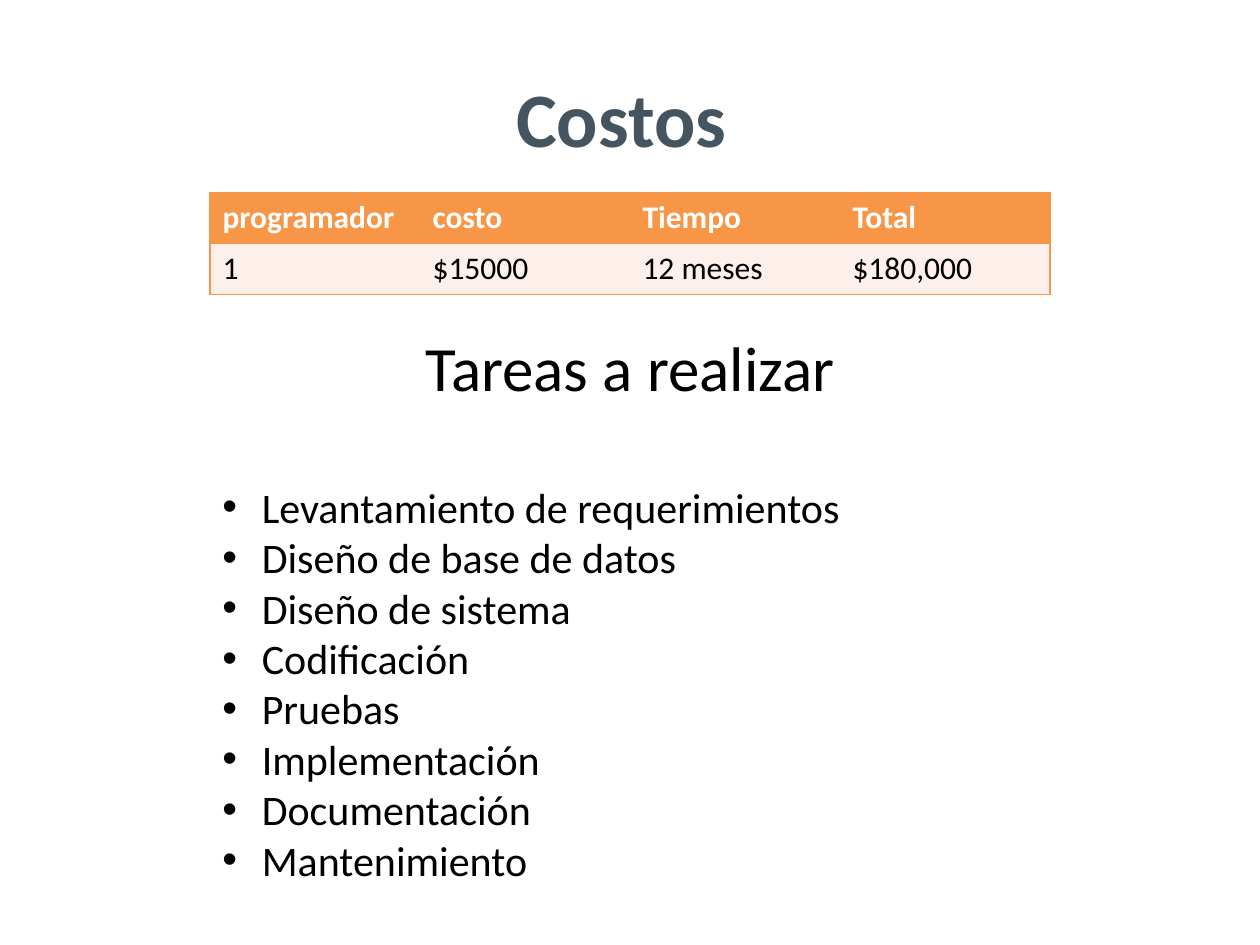
from dataclasses import dataclass

from lxml.etree import SubElement as Sub
from pptx import Presentation
from pptx.dml.color import RGBColor as RGB
from pptx.enum.text import MSO_ANCHOR as Anchor, PP_ALIGN as Align
from pptx.oxml.ns import qn
from pptx.util import Pt


@dataclass(frozen=True)
class Theme:
    face: str = "Calibri"
    slate: str = "455560"
    orange: str = "F79646"
    tint: str = "FDEFE9"
    white: str = "FFFFFF"
    black: str = "000000"
    title: int = 44
    head: int = 36
    body: int = 24
    cell: int = 18


THEME = Theme()
COSTS = [
    ["programador", "costo", "Tiempo", "Total"],
    ["1", "$15000", "12 meses", "$180,000"],
]
TASKS = [
    "Levantamiento de requerimientos",
    "Diseño de base de datos",
    "Diseño de sistema",
    "Codificación",
    "Pruebas",
    "Implementación",
    "Documentación",
    "Mantenimiento",
]
LEFT, WIDTH = 120, 480


def style(para, size, color, bold=False):
    for run in para.runs:
        font = run.font
        font.name, font.size, font.bold = THEME.face, Pt(size), bold
        font.color.rgb = RGB.from_string(color)


def add_title(slide, text):
    title = slide.shapes.title
    title.left, title.top = Pt(36), Pt(21.6)
    title.width, title.height = Pt(648), Pt(90)
    frame = title.text_frame
    frame.text = text
    frame.vertical_anchor = Anchor.MIDDLE
    para = frame.paragraphs[0]
    para.alignment = Align.CENTER
    style(para, THEME.title, THEME.slate, True)


def set_edges(cell, shown):
    """Draw the named sides (L, R, T, B) in orange and hide the others."""
    props = cell._tc.get_or_add_tcPr()
    for spot, side in enumerate("LRTB"):
        line = Sub(props, qn(f"a:ln{side}"), w=str(Pt(1)))
        if side in shown:
            fill = Sub(line, qn("a:solidFill"))
            Sub(fill, qn("a:srgbClr"), val=THEME.orange)
        else:
            Sub(line, qn("a:noFill"))
        props.insert(spot, line)


def add_costs(slide, rows):
    count = len(rows[0])
    table = slide.shapes.add_table(
        len(rows), count, Pt(LEFT), Pt(110), Pt(WIDTH), Pt(58.4)
    ).table
    for r, row in enumerate(rows):
        head = r == 0
        for c, text in enumerate(row):
            cell = table.cell(r, c)
            cell.text = text
            color = THEME.white if head else THEME.black
            style(cell.text_frame.paragraphs[0], THEME.cell, color, head)
            cell.fill.solid()
            fill = THEME.orange if head else THEME.tint
            cell.fill.fore_color.rgb = RGB.from_string(fill)
            sides = "TB" + "L" * (c == 0) + "R" * (c == count - 1)
            set_edges(cell, sides)


def add_bullet(para):
    props = para._p.get_or_add_pPr()
    props.set("marL", str(Pt(22.5)))
    props.set("indent", str(Pt(-22.5)))
    Sub(props, qn("a:buFont"), typeface="Arial")
    Sub(props, qn("a:buChar"), char="•")


def add_tasks(slide, head, tasks):
    box = slide.shapes.add_textbox(Pt(LEFT), Pt(184.3), Pt(WIDTH), Pt(349))
    frame = box.text_frame
    frame.word_wrap = True
    frame.text = "\n".join([head, *tasks])
    first, *items = frame.paragraphs
    first.alignment = Align.CENTER
    style(first, THEME.head, THEME.black)
    items[0].space_before = Pt(44)
    for item in items:
        add_bullet(item)
        style(item, THEME.body, THEME.black)


def main():
    deck = Presentation()
    deck.slide_width, deck.slide_height = Pt(720), Pt(540)
    slide = deck.slides.add_slide(deck.slide_layouts[5])
    add_title(slide, "Costos ")
    add_costs(slide, COSTS)
    add_tasks(slide, "Tareas a realizar", TASKS)
    deck.save("out.pptx")


if __name__ == "__main__":
    main()
